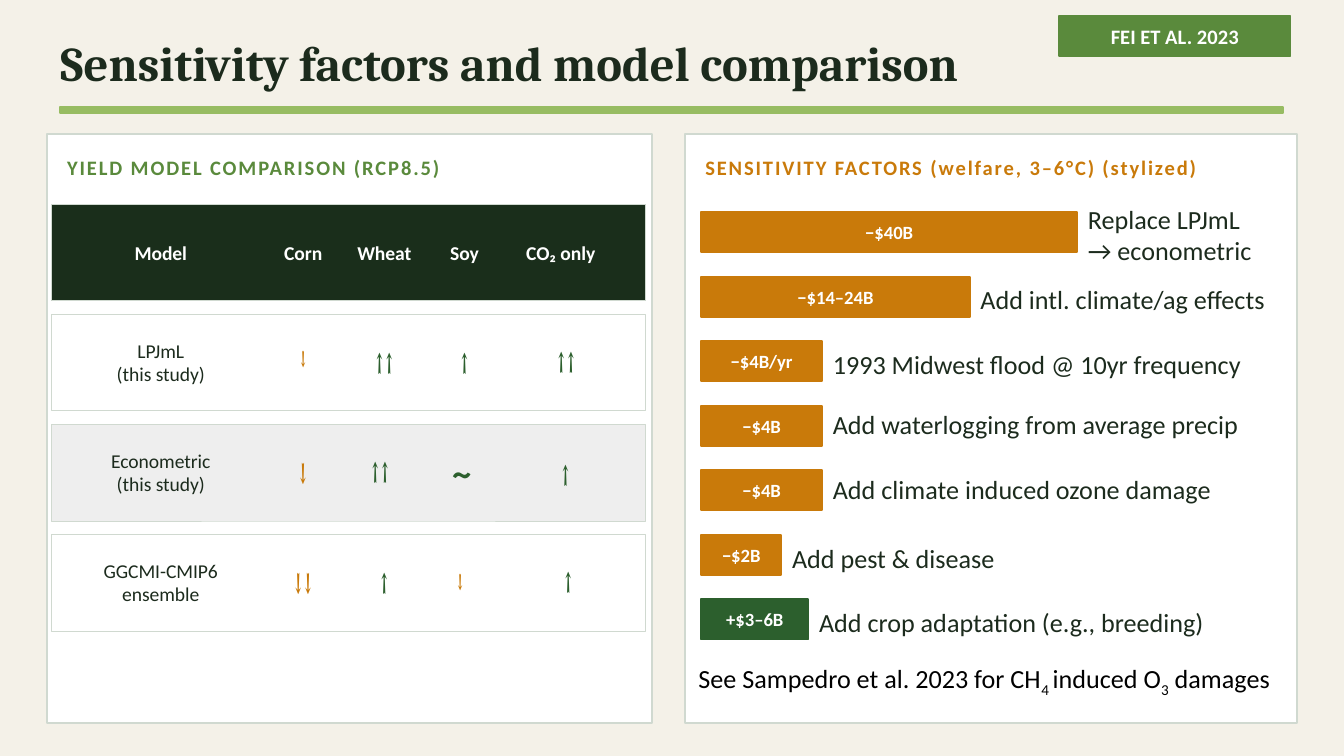
from pptx import Presentation
from pptx.dml.color import RGBColor
from pptx.enum.shapes import MSO_SHAPE
from pptx.enum.text import MSO_ANCHOR, MSO_AUTO_SIZE, PP_ALIGN
from pptx.util import Cm, Pt

CREAM = RGBColor(0xF4, 0xF1, 0xE8)
WHITE = RGBColor(0xFF, 0xFF, 0xFF)
BLACK = RGBColor(0x00, 0x00, 0x00)
INK = RGBColor(0x1C, 0x2B, 0x1D)
HEADER_GREEN = RGBColor(0x1A, 0x2E, 0x1B)
DARK_GREEN = RGBColor(0x2C, 0x5F, 0x2D)
GREEN = RGBColor(0x5A, 0x8A, 0x3C)
LIGHT_GREEN = RGBColor(0x97, 0xBC, 0x62)
ORANGE = RGBColor(0xC9, 0x7A, 0x0A)
BORDER = RGBColor(0xD0, 0xD9, 0xD0)
STRIPE = RGBColor(0xEE, 0xEE, 0xEE)

TITLE = {"name": "Cambria", "size": Pt(26), "bold": True}
HEADING = {"name": "Calibri", "size": Pt(11), "bold": True}
COLUMN_HEAD = {"name": "Calibri", "size": Pt(10.5), "bold": True}
MODEL_NAME = {"name": "Calibri", "size": Pt(10.5), "bold": False}
STRONG = {"name": "Cambria", "size": Pt(18), "bold": True}
WEAK = {"name": "Cambria", "size": Pt(14), "bold": True}
BAR_VALUE = {"name": "Calibri", "size": Pt(10), "bold": True}
LABEL = {"name": "Calibri", "size": Pt(14), "bold": False}

COLUMNS = [
    ("Model", 0.18, 3.94),
    ("Corn", 4.14, 1.4),
    ("Wheat", 5.59, 1.57),
    ("Soy", 7.19, 1.4),
    ("CO₂ only", 8.59, 2.24),
]
# Each effect: symbol, weight, horizontal shift, vertical shift
MODELS = [
    ("LPJmL\n(this study)", WHITE, [
        ("↓", WEAK, 0, -0.09), ("↑↑", STRONG, 0, 0),
        ("↑", STRONG, 0, 0), ("↑↑", STRONG, 0.1, -0.03)]),
    ("Econometric\n(this study)", STRIPE, [
        ("↓", STRONG, 0, 0), ("↑↑", STRONG, -0.08, -0.03),
        ("~", STRONG, -0.05, 0), ("↑", STRONG, 0.09, 0.03)]),
    ("GGCMI-CMIP6\nensemble", WHITE, [
        ("↓↓", STRONG, 0, 0), ("↑", STRONG, 0, 0),
        ("↓", WEAK, -0.08, -0.03), ("↑", STRONG, 0.14, -0.03)]),
]
# Each factor: value, bar width, label, label drop, right margin, colour
FACTORS = [
    ("−$40B", 7.11, "Replace LPJmL → econometric", 0.05, 0.64, ORANGE),
    ("−$14–24B", 5.08, "Add intl. climate/ag effects", 0.05, 0.18, ORANGE),
    ("−$4B/yr", 2.29, "1993 Midwest flood @ 10yr frequency", 0.05, 0.64, ORANGE),
    ("−$4B", 2.29, "Add waterlogging from average precip", -0.03, 0.64, ORANGE),
    ("−$4B", 2.29, "Add climate induced ozone damage", -0.03, 0.64, ORANGE),
    ("−$2B", 1.52, "Add pest & disease", 0.05, 0.64, ORANGE),
    ("+$3–6B", 2.03, "Add crop adaptation (e.g., breeding)", 0.05, 0.64, DARK_GREEN),
]
NOTE = [("See Sampedro et al. 2023 for CH", False), ("4 ", True),
        ("induced O", False), ("3", True), (" damages", False)]


def format_font(font, style, color):
    for attribute, value in style.items():
        setattr(font, attribute, value)
    font.color.rgb = color


def write(shape, text, style, color, align=PP_ALIGN.LEFT):
    frame = shape.text_frame
    settings = {
        "margin_left": 0, "margin_top": 0, "margin_right": 0, "margin_bottom": 0,
        "vertical_anchor": MSO_ANCHOR.MIDDLE, "word_wrap": True,
        "auto_size": MSO_AUTO_SIZE.NONE, "text": text,
    }
    for attribute, value in settings.items():
        setattr(frame, attribute, value)
    for paragraph in frame.paragraphs:
        paragraph.alignment = align
        for run in paragraph.runs:
            format_font(run.font, style, color)


def add_text(slide, box, *content):
    shape = slide.shapes.add_textbox(*map(Cm, box))
    write(shape, *content)
    return shape


def add_box(slide, box, fill, line, line_width=1):
    shape = slide.shapes.add_shape(MSO_SHAPE.RECTANGLE, *map(Cm, box))
    shape.shadow.inherit = False
    shape.fill.solid()
    shape.fill.fore_color.rgb = fill
    shape.line.color.rgb = line
    shape.line.width = Pt(line_width)
    return shape


def add_header(slide, box):
    left, top, width, height = box
    badge = add_box(slide, (20.02, 0.3, 4.37, 0.76), GREEN, GREEN)
    write(badge, "FEI ET AL. 2023", HEADING, WHITE, PP_ALIGN.CENTER)
    title = slide.shapes.title
    for attribute, value in zip(("left", "top", "width", "height"), box):
        setattr(title, attribute, Cm(value))
    write(title, "Sensitivity factors and model comparison", TITLE, INK)
    add_box(slide, (left, top + height + 0.08, width, 0.1), LIGHT_GREEN, LIGHT_GREEN)


def add_panel(slide, box, heading, color):
    left, top, width, height = box
    add_box(slide, box, WHITE, BORDER)
    shape = add_text(slide, (left + 0.38, top + 0.25, width - 0.76, 0.76),
                     heading, HEADING, color)
    shape.text_frame.paragraphs[0].runs[0]._r.get_or_add_rPr().set("spc", "100")


def add_model_comparison(slide, box):
    left, top, width, height = box
    add_panel(slide, box, "YIELD MODEL COMPARISON (RCP8.5)", GREEN)
    header = [(name, COLUMN_HEAD, WHITE, 0, 0) for name, offset, span in COLUMNS]
    rows = [(HEADER_GREEN, header)]
    for model, fill, effects in MODELS:
        cells = [(model, MODEL_NAME, INK, 0, 0)]
        for symbol, style, shift, drop in effects:
            color = ORANGE if "↓" in symbol else DARK_GREEN
            cells.append((symbol, style, color, shift, drop))
        rows.append((fill, cells))
    for index, (fill, cells) in enumerate(rows):
        row_top = top + 1.32 + 2.08 * index
        add_box(slide, (left + 0.08, row_top, width - 0.2, 1.83), fill, BORDER, 0.5)
        for (name, offset, span), (text, style, color, shift, drop) in zip(COLUMNS, cells):
            cell = (left + offset + shift, row_top + 0.15 + drop, span, 1.52)
            add_text(slide, cell, text, style, color, PP_ALIGN.CENTER)


def add_sensitivity_factors(slide, box):
    left, top, width, height = box
    add_panel(slide, box, "SENSITIVITY FACTORS (welfare, 3–6°C) (stylized)", ORANGE)
    for index, (value, length, label, drop, margin, color) in enumerate(FACTORS):
        bar_top = top + 1.47 + 1.22 * index
        bar = add_box(slide, (left + 0.3, bar_top, length, 0.76), color, color)
        write(bar, value, BAR_VALUE, WHITE, PP_ALIGN.CENTER)
        label_offset = 0.3 + length + 0.2
        add_text(slide, (left + label_offset, bar_top + drop,
                         width - margin - label_offset, 0.76), label, LABEL, INK)
    add_note(slide, (left, top + 9.86, width - 0.13, 0.86))


def add_note(slide, box):
    frame = slide.shapes.add_textbox(*map(Cm, box)).text_frame
    frame.word_wrap = True
    frame.auto_size = MSO_AUTO_SIZE.SHAPE_TO_FIT_TEXT
    for text, is_subscript in NOTE:
        run = frame.paragraphs[0].add_run()
        run.text = text
        format_font(run.font, LABEL, BLACK)
        if is_subscript:
            run._r.get_or_add_rPr().set("baseline", "-25000")


def main():
    presentation = Presentation()
    presentation.slide_width = Cm(25.4)
    presentation.slide_height = Cm(14.29)
    slide = presentation.slides.add_slide(presentation.slide_layouts[5])
    slide.background.fill.solid()
    slide.background.fill.fore_color.rgb = CREAM
    add_header(slide, (1.14, 0.38, 23.11, 1.57))
    add_model_comparison(slide, (0.89, 2.54, 11.43, 11.13))
    add_sensitivity_factors(slide, (12.95, 2.54, 11.56, 11.13))
    presentation.save("out.pptx")


if __name__ == "__main__":
    main()
